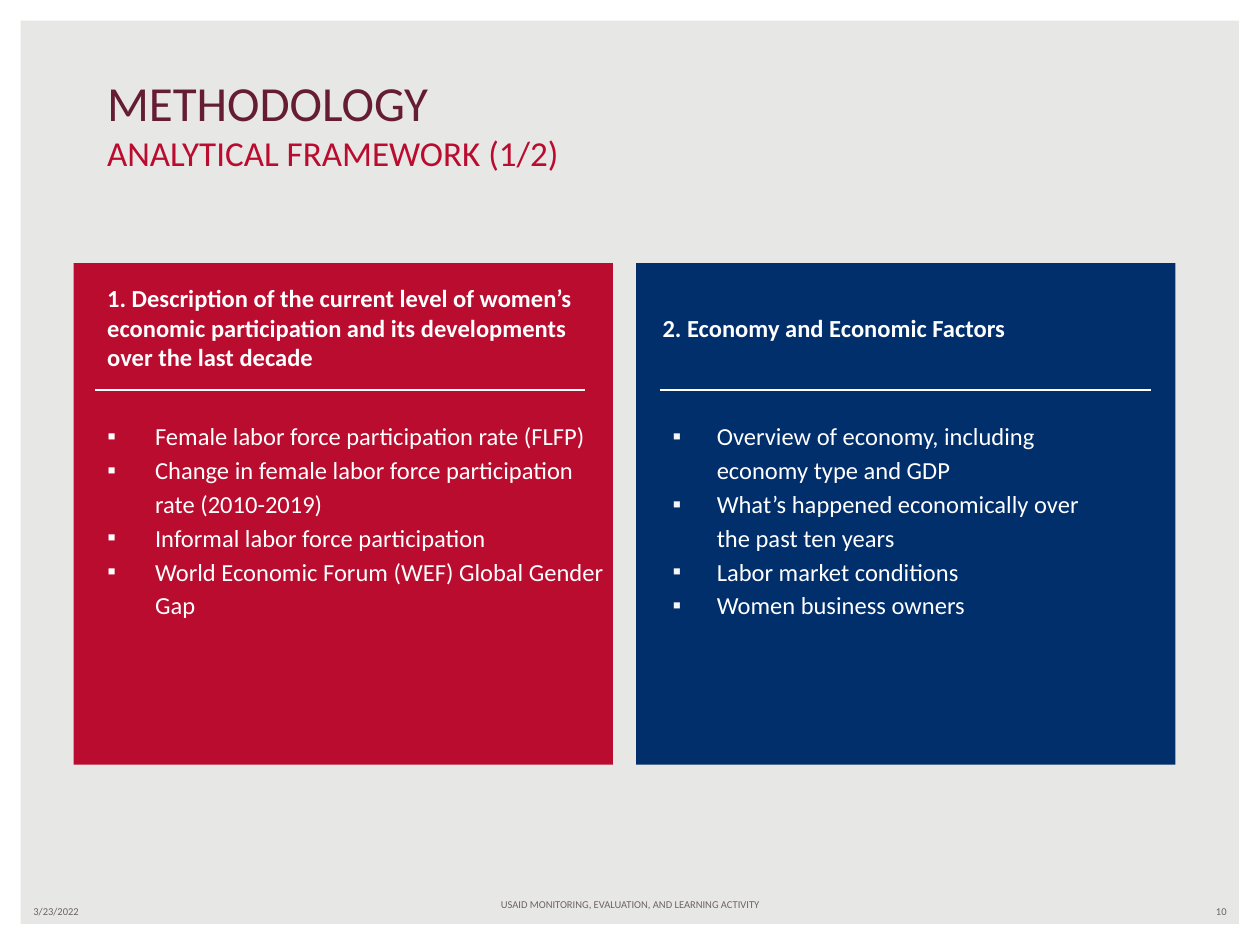
import pptx
import pptx.util
import pptx.dml.color
import pptx.enum.shapes
import pptx.enum.text
import pptx.oxml
import pptx.oxml.ns

Pt = pptx.util.Pt
Shape = pptx.enum.shapes.MSO_SHAPE
Anchor = pptx.enum.text.MSO_ANCHOR
Align = pptx.enum.text.PP_ALIGN
RED, NAVY, WHITE, GREY = "BA0C2F", "002F6C", "FFFFFF", "6C6463"


def color(code):
    return pptx.dml.color.RGBColor.from_string(code)


def style(font, **vals):
    """Set a font's name and colour, then any other attributes."""
    font.color.rgb = color(vals.pop("ink"))
    for key, val in {"name": "Calibri", **vals}.items():
        setattr(font, key, val)


def place(shape, box):
    for key, val in zip(("left", "top", "width", "height"), box):
        setattr(shape, key, Pt(val))


def setup(frame, anchor=Anchor.TOP):
    vals = {"word_wrap": True, "vertical_anchor": anchor,
            "auto_size": pptx.enum.text.MSO_AUTO_SIZE.NONE}
    for key, val in vals.items():
        setattr(frame, key, val)


def block(slide, kind, box, fill):
    """Add a plain shape at the back of the slide."""
    shape = slide.shapes.add_shape(kind, *map(Pt, box))
    shape.shadow.inherit = False
    shape.fill.solid()
    shape.fill.fore_color.rgb = color(fill)
    shape.line.fill.background()
    slide.shapes._spTree.insert(2, shape._element)
    return shape


def label(slide, box, text, align=Align.LEFT, anchor=Anchor.TOP, **font):
    frame = slide.shapes.add_textbox(*map(Pt, box)).text_frame
    setup(frame, anchor)
    para = frame.paragraphs[0]
    para.alignment = align
    run = para.add_run()
    run.text = text
    style(run.font, **font)


def rule(slide, x, y, width):
    line = slide.shapes.add_connector(
        pptx.enum.shapes.MSO_CONNECTOR.STRAIGHT, Pt(x), Pt(y), Pt(x + width), Pt(y))
    line.line.color.rgb = color(WHITE)
    line.line.width = Pt(0.75)
    line._element.spPr.append(pptx.oxml.parse_xml(
        f"<a:effectLst {pptx.oxml.ns.nsdecls('a')}/>"))


def bullet(para, left, hang, ink):
    props = para._p.get_or_add_pPr()
    props.set("marL", str(Pt(left)))
    props.set("indent", str(Pt(-hang)))
    space = pptx.oxml.ns.nsdecls("a")
    for tag in (f'<a:buClr {space}><a:srgbClr val="{ink}"/></a:buClr>',
                f'<a:buFont {space} typeface="Arial"/>',
                f'<a:buChar {space} char="▪"/>'):
        props.append(pptx.oxml.parse_xml(tag))


def header(slide, box):
    title = slide.shapes.title
    place(title, box)
    setup(title.text_frame, Anchor.BOTTOM)
    para = title.text_frame.paragraphs[0]
    para.alignment = Align.LEFT
    lines = (("METHODOLOGY", 28, "651D32"), ("ANALYTICAL FRAMEWORK (1/2)", 20, RED))
    for pos, (text, size, ink) in enumerate(lines):
        if pos:
            para.add_line_break()
        run = para.add_run()
        run.text = text
        style(run.font, size=Pt(size), ink=ink)


def panel(slide, box, body, data):
    """Fill a coloured box with a heading, a rule and a bullet list."""
    x, y, width, height = box
    block(slide, Shape.RECTANGLE, box, data["fill"])
    dx, dy, wide, high = data["head"]
    label(slide, (x + dx, y + dy, wide, high), data["title"],
          size=Pt(14), bold=True, ink=WHITE)
    rule(slide, x + data["rule"], y + 72.5, 280.5)
    dx, wide = data["list"]
    place(body, (x + dx, y + 84.4, wide, 144))
    frame = body.text_frame
    setup(frame)
    for pos, text in enumerate(data["items"]):
        para = frame.add_paragraph() if pos else frame.paragraphs[0]
        para.line_spacing = 1.15
        para.space_before = Pt(0)
        bullet(para, *data["indent"], data["dot"])
        run = para.add_run()
        run.text = text
        style(run.font, size=Pt(14), ink=WHITE)


def footer(slide, y):
    font = {"size": Pt(6), "ink": GREY, "anchor": Anchor.MIDDLE}
    label(slide, (12, y, 168, 14.4), "3/23/2022", **font)
    label(slide, (246, y - 3.6, 228, 14.4),
          "USAID MONITORING, EVALUATION, AND LEARNING ACTIVITY", Align.CENTER, **font)
    label(slide, (540, y, 168, 14.4), "10", Align.RIGHT, **font)


PANELS = (
    {"fill": RED, "head": (12.2, 8, 296, 58.3), "rule": 12, "list": (-34.6, 347),
     "indent": (74, 27.2), "dot": WHITE,
     "title": "1. Description of the current level of women’s economic "
              "participation and its developments over the last decade",
     "items": ("Female labor force participation rate (FLFP)",
               "Change in female labor force participation rate (2010-2019)",
               "Informal labor force participation",
               "World Economic Forum (WEF) Global Gender Gap")},
    {"fill": NAVY, "head": (8, 24.8, 278, 24.5), "rule": 13.7, "list": (-33.1, 301),
     "indent": (72, 25.2), "dot": "F6F6F6",
     "title": "2. Economy and Economic Factors",
     "items": ("Overview of economy, including economy type and GDP",
               "What’s happened economically over the past ten years",
               "Labor market conditions",
               "Women business owners")},
)


def main():
    deck = pptx.Presentation()
    deck.slide_width, deck.slide_height = Pt(720), Pt(540)
    slide = deck.slides.add_slide(deck.slide_layouts[3])
    slide.background.fill.solid()
    slide.background.fill.fore_color.rgb = color("E7E7E5")
    header(slide, (54, 37.4, 612, 65.5))
    for pos, data in enumerate(PANELS):
        box = (42 + pos * 321.5, 150.3, 308.2, 286.6)
        panel(slide, box, slide.placeholders[pos + 1], data)
    footer(slide, 513.4)
    frame = block(slide, Shape.FRAME, (0, 0, 720, 540), WHITE)
    frame.adjustments[0] = 0.022
    deck.save("out.pptx")


if __name__ == "__main__":
    main()
